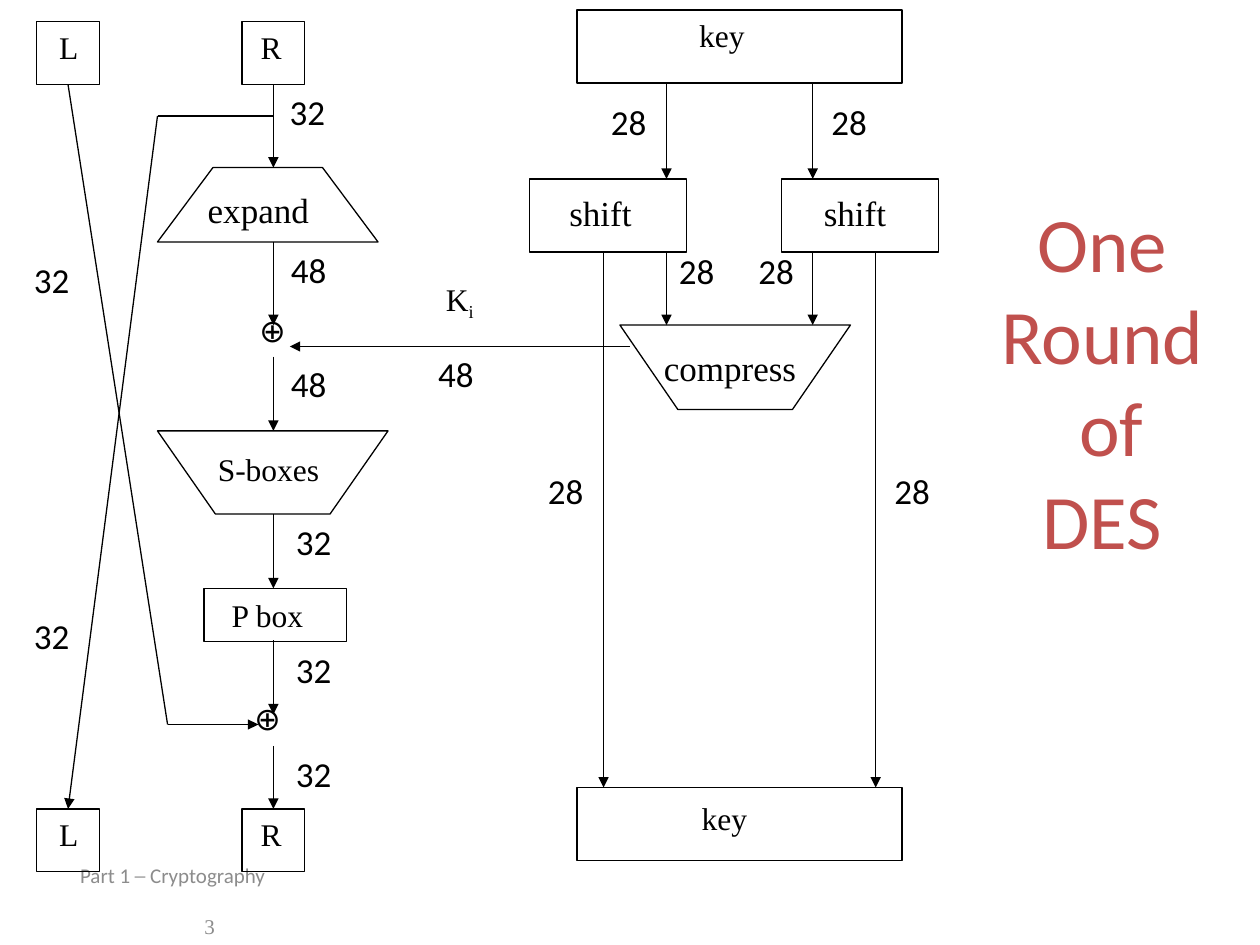
from lxml import etree
from pptx import Presentation
from pptx.dml.color import RGBColor
from pptx.enum.shapes import MSO_CONNECTOR, MSO_SHAPE
from pptx.enum.text import MSO_ANCHOR, MSO_AUTO_SIZE, PP_ALIGN
from pptx.oxml.ns import qn
from pptx.util import Inches, Pt

BLACK = RGBColor(0x00, 0x00, 0x00)
RED = RGBColor(0xC0, 0x50, 0x4D)
GRAY = RGBColor(0x8C, 0x8C, 0x8C)
SERIF = "Times New Roman"
SANS = "Calibri"
RECT = MSO_SHAPE.RECTANGLE
STRAIGHT = MSO_CONNECTOR.STRAIGHT
GROW = MSO_AUTO_SIZE.SHAPE_TO_FIT_TEXT
MIDDLE = MSO_ANCHOR.MIDDLE
LEFT = PP_ALIGN.LEFT
CENTER = PP_ALIGN.CENTER


def add_text(x, y, w, h, lines, font, size, color=BLACK, align=LEFT, wrap=False):
    tf = slide.shapes.add_textbox(Inches(x), Inches(y), Inches(w), Inches(h)).text_frame
    tf.word_wrap = wrap
    tf.auto_size = GROW
    for i, line in enumerate(lines):
        p = tf.paragraphs[0] if i == 0 else tf.add_paragraph()
        p.alignment = align
        p.font.name = font
        p.font.size = Pt(size)
        p.font.color.rgb = color
        p.add_run().text = line
    return tf


def outline(sp):
    sp.shadow.inherit = False
    sp.fill.background()
    sp.line.color.rgb = BLACK
    sp.line.width = Pt(0.75)


prs = Presentation()
prs.slide_width = Inches(10)
prs.slide_height = Inches(7.5)
slide = prs.slides.add_slide(prs.slide_layouts[6])

tf = add_text(0.5, 6.95, 2.33, 0.4, [" Part 1 ─ Cryptography", "3"], SANS, 12, GRAY, wrap=True)
tf.auto_size = MSO_AUTO_SIZE.NONE
tf.vertical_anchor = MIDDLE
number = tf.paragraphs[1]
number.alignment = CENTER
number.space_before = Pt(14.5)
number.font.name = SERIF

boxes = [(x, y, 0.5, 0.5) for y in (0.17, 6.42) for x in (0.29, 1.92)]
boxes += [(x, 1.42, 1.25, 0.58) for x in (4.2, 6.2)]
boxes += [(4.58, y, 2.58, 0.58) for y in (0.08, 6.25)]
boxes.append((1.62, 4.67, 1.13, 0.42))
for box in boxes:
    outline(slide.shapes.add_shape(RECT, *map(Inches, box)))

trapezoids = [
    [(1.25, 1.92), (1.69, 1.33), (2.56, 1.33), (3, 1.92)],
    [(4.92, 2.58), (5.38, 3.25), (6.29, 3.25), (6.75, 2.58)],
    [(1.25, 3.42), (1.71, 4.08), (2.62, 4.08), (3.08, 3.42)],
]
for corners in trapezoids:
    points = [(Inches(x), Inches(y)) for x, y in corners]
    builder = slide.shapes.build_freeform(*points[0])
    builder.add_line_segments(points[1:], close=True)
    outline(builder.convert_to_shape())

round_steps = [(0.67, 1.33), (1.92, 2.58), (2.83, 3.42), (4.08, 4.67), (5.08, 5.67), (5.92, 6.42)]
arrows = [(2.17, top, 2.17, bottom) for top, bottom in round_steps]
arrows += [(x, top, x, bottom) for x in (5.29, 6.45) for top, bottom in ((0.67, 1.42), (2, 2.58))]
arrows += [(x, 2, x, 6.25) for x in (4.79, 6.95)]
arrows += [(5, 2.75, 2.3, 2.75), (1.33, 5.75, 2.05, 5.75), (1.25, 0.92, 0.54, 6.42)]
plain_lines = [(0.54, 0.67, 1.33, 5.75), (2.17, 0.92, 1.25, 0.92)]
for ends in arrows + plain_lines:
    line = slide.shapes.add_connector(STRAIGHT, *map(Inches, ends))
    line.line.color.rgb = BLACK
    line.line.width = Pt(0.75)
    if ends in arrows:
        etree.SubElement(line.line._get_or_add_ln(), qn("a:tailEnd"), type="triangle")
    etree.SubElement(line._element.spPr, qn("a:effectLst"))

bit_counts = {
    "28": [(7, 3.68), (4.25, 3.68), (6.5, 0.75), (4.75, 0.75), (5.92, 1.93), (5.29, 1.93)],
    "48": [(3.38, 2.75), (2.21, 1.92), (2.21, 2.83)],
    "32": [(2.2, 0.67), (2.25, 4.08), (2.25, 5.1), (2.25, 5.92), (0.17, 2), (0.17, 4.83)],
}
for bits, places in bit_counts.items():
    for x, y in places:
        add_text(x, y, 0.54, 0.49, [bits], SANS, 20)

labels = [
    ("expand", 1.55, 1.45, 1.11, 0.43, 20),
    ("shift", 4.42, 1.47, 0.71, 0.43, 20),
    ("shift", 6.44, 1.47, 0.71, 0.43, 20),
    ("compress", 5.17, 2.7, 1.41, 0.43, 20),
    ("S-boxes", 1.63, 3.52, 1.12, 0.4, 18),
    ("P box", 1.74, 4.68, 0.84, 0.4, 18),
    ("key", 5.45, 0.08, 0.72, 0.5, 18),
    ("key", 5.47, 6.29, 0.72, 0.5, 18),
]
for y in (0.17, 6.42):
    labels += [("L", 0.37, y, 0.39, 0.5, 18), ("R", 1.97, y, 0.44, 0.5, 18)]
for text, x, y, w, h, size in labels:
    add_text(x, y, w, h, [text], SERIF, size)

subkey = add_text(3.44, 2.17, 0.47, 0.5, ["K"], SERIF, 18)
r = subkey.paragraphs[0].add_run()
r.text = "i"
r.font._element.set("baseline", "-25000")

for x, y in ((1.96, 2.42), (1.92, 5.5)):
    add_text(x, y, 0.46, 0.5, ["⊕"], SANS, 18)

add_text(7.75, 1.5, 2, 3.51, ["One", "Round", " of", "DES"], SANS, 44, RED, CENTER, wrap=True)

prs.save("out.pptx")
